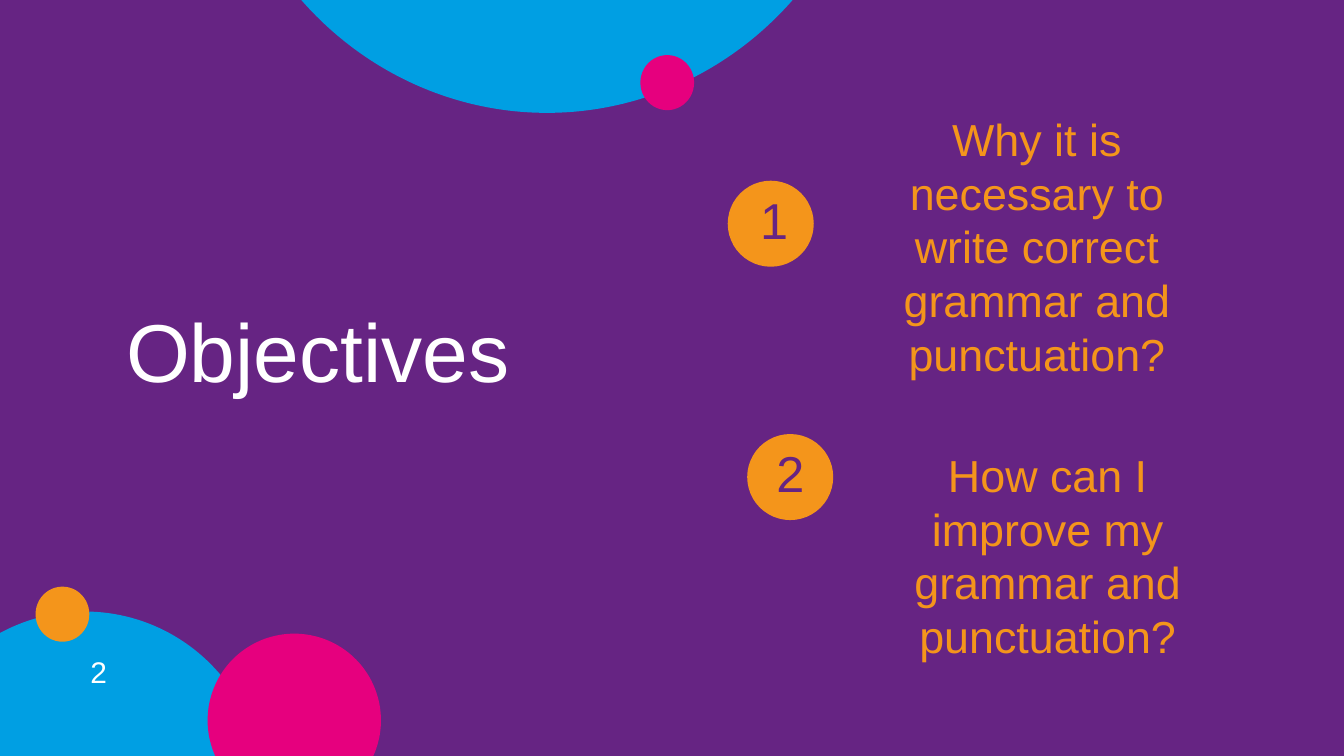
from math import asin, cos, pi, sin

from pptx import Presentation
from pptx.dml.color import RGBColor
from pptx.enum.shapes import MSO_SHAPE
from pptx.enum.text import MSO_ANCHOR, PP_ALIGN
from pptx.util import Inches, Pt

HUES = {"plum": "662483", "blue": "009FE3", "pink": "E6007E",
        "gold": "F4951B", "white": "FFFFFF"}
CELLS = 10
COLS, ROWS = 100, 56.25


def span(*cells):
    """Turn grid cells into lengths, ten cells to the inch."""
    return [Inches(cell / CELLS) for cell in cells]


class Deck:
    """Hold the style and the current slide."""

    def __init__(self):
        """Open a deck with one plum slide."""
        self.show = Presentation()
        self.show.slide_width, self.show.slide_height = span(COLS, ROWS)
        self.slide = self.show.slides.add_slide(self.show.slide_layouts[6])
        self.paint(self.slide.background.fill, "plum")

    def paint(self, fill, hue):
        """Set a solid fill."""
        fill.solid()
        fill.fore_color.rgb = RGBColor.from_string(HUES[hue])

    def finish(self, shape, hue):
        """Give a shape a flat fill with no line or shadow."""
        self.paint(shape.fill, hue)
        shape.line.fill.background()
        shape.shadow.inherit = False

    def disc(self, box, hue):
        """Add an oval."""
        self.finish(self.slide.shapes.add_shape(MSO_SHAPE.OVAL, *span(*box)), hue)

    def dome(self, x, y, size, hue, steps=90):
        """Add a circle cut off by the foot of the slide."""
        dip = asin((ROWS - y) / size)
        turns = [pi - dip + (pi + 2 * dip) * i / steps for i in range(steps + 1)]
        dots = [span(x + size * cos(t), y + size * sin(t)) for t in turns]
        path = self.slide.shapes.build_freeform(*dots[0])
        path.add_line_segments(dots[1:], close=True)
        self.finish(path.convert_to_shape(), hue)

    def text(self, box, words, size, hue, align=PP_ALIGN.LEFT,
             anchor=MSO_ANCHOR.MIDDLE, pitch=None, pad=1, wrap=True):
        """Add a text box with one run."""
        frame = self.slide.shapes.add_textbox(*span(*box)).text_frame
        frame.word_wrap = wrap
        frame.vertical_anchor = anchor
        frame.margin_left, frame.margin_right = span(1, 1)
        frame.margin_top, frame.margin_bottom = span(pad, pad)
        para = frame.paragraphs[0]
        para.alignment = align
        para.line_spacing = pitch
        run = para.add_run()
        run.text = words
        run.font.name = "Arial"
        run.font.size = Pt(size)
        run.font.color.rgb = RGBColor.from_string(HUES[hue])

    def goal(self, mark, disc, label, body, words):
        """Add a numbered disc with its question."""
        self.disc((*disc, 6.4, 6.4), "gold")
        self.text((*label, 8.8, 6.2), mark, 27, "plum", PP_ALIGN.CENTER, pitch=0.9)
        self.text((*body, 27.6, 4.1), words, 24, "gold", PP_ALIGN.CENTER,
                  MSO_ANCHOR.TOP, Pt(28.8))


def main():
    """Build the slide."""
    deck = Deck()
    deck.disc((-7, 45.5, 26.6, 26.9), "blue")
    deck.disc((16, -42.9, 49.4, 51.3), "blue")
    deck.disc((47.65, 4.1, 4, 4.1), "pink")
    deck.disc((2.65, 43.65, 4, 4.1), "gold")
    deck.dome(21.9, 53.6, 6.45, "pink")
    deck.text((8.4, 19.85, 63.3, 12.4), "Objectives", 44, "white")
    deck.goal("1", (54.15, 13.45), (53.2, 13.5), (63.35, 7.3),
              "Why it is necessary to write correct grammar and punctuation?")
    deck.goal("2", (55.6, 32.3), (54.4, 32.3), (64.15, 32.3),
              "How can I improve my grammar and punctuation?")
    deck.text((5.75, 48.15, 3.3, 3.7), "2", 16, "white",
              anchor=MSO_ANCHOR.TOP, pad=0.5, wrap=False)
    deck.show.save("out.pptx")


if __name__ == "__main__":
    main()
